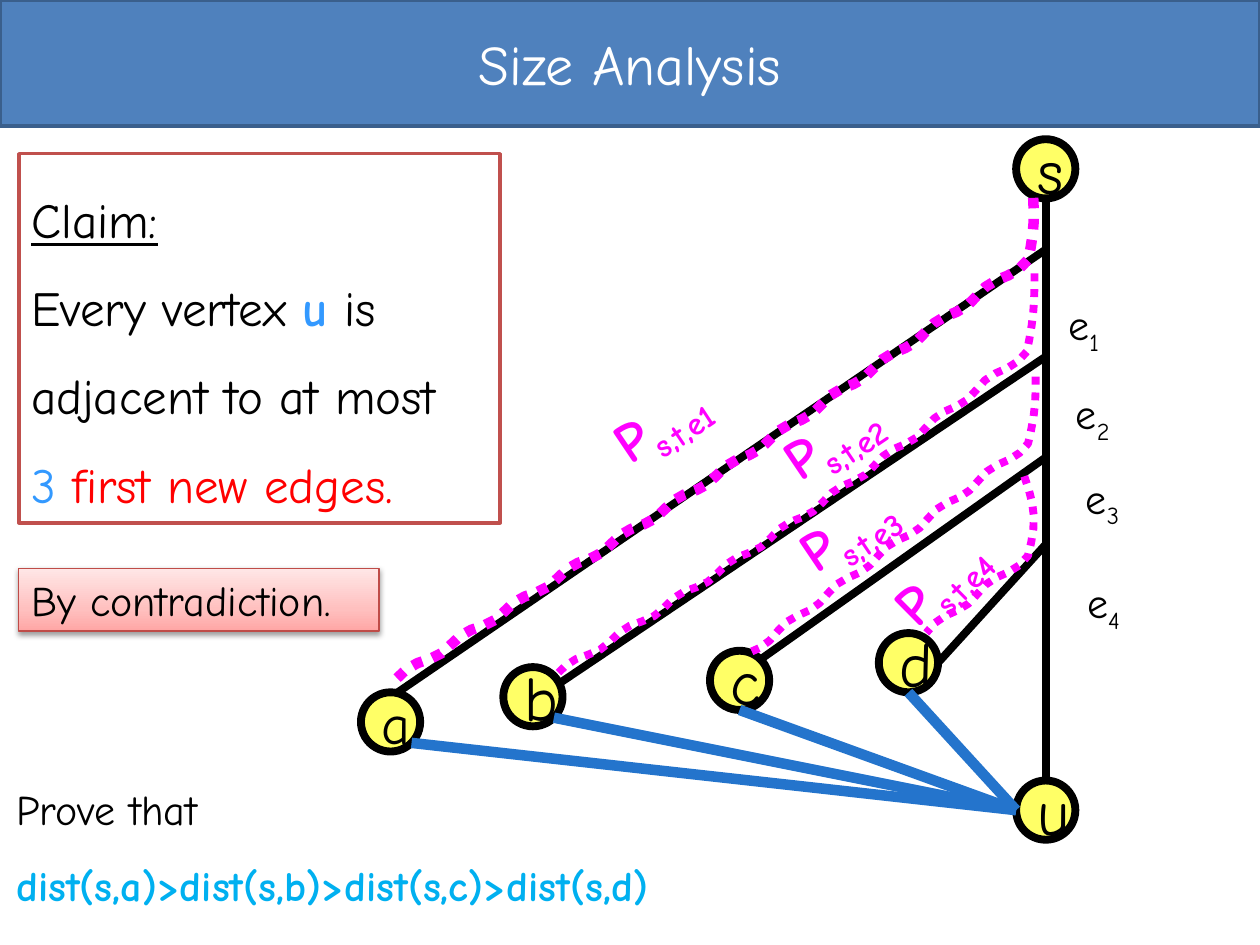
from math import cos, hypot, pi, radians, sin
from typing import NamedTuple

from lxml import etree
from pptx import Presentation
from pptx.dml.color import RGBColor
from pptx.enum.dml import MSO_LINE
from pptx.enum.shapes import MSO_CONNECTOR, MSO_SHAPE
from pptx.enum.text import MSO_ANCHOR, MSO_AUTO_SIZE, PP_ALIGN
from pptx.oxml import parse_xml
from pptx.oxml.ns import nsdecls, qn
from pptx.util import Inches, Pt

FONT = "Comic Neue"
BLACK, WHITE, YELLOW, MAGENTA = "000000", "FFFFFF", "FFFF66", "FF00FF"
TITLE_BLUE, EDGE_BLUE, WORD_BLUE, SKY, RED = "4F81BD", "2474CC", "3399FF", "00B0F0", "FF0000"
RADIUS = 0.235
SPINE_X = 8.3
SOURCE, TARGET = (SPINE_X, 1.34), (SPINE_X, 6.43)
RIGHT, BOTTOM_RIGHT, BOTTOM, LEFT, TOP = 0, 45, 90, 180, 270
STEP, RIPPLE, RIPPLE_LENGTH = 0.1, 0.02, 0.5


class Detour(NamedTuple):
    vertex: str
    centre: tuple
    size: int
    fork_y: float
    branch_angle: float
    edge_angle: float
    path_start: tuple
    path_corner: tuple
    path_end: tuple
    path_width: float
    bulge: float
    sag: float
    edge_label: tuple
    path_label: tuple
    tilt: float


DETOURS = [
    Detour("a", (3.1, 5.73), 32, 1.98, 282, BOTTOM_RIGHT, (8.2, 1.57), (8.16, 2.06),
           (3.15, 5.38), 6, 0.02, 0.06, (8.38, 2.32), (4.71, 2.91), 326),
    Detour("b", (4.23, 5.53), 36, 2.83, 333, BOTTOM_RIGHT, (8.21, 2.17), (8.15, 2.79),
           (4.41, 5.35), 4.5, 0.02, 0.07, (8.44, 3.03), (6.06, 3.05), 326),
    Detour("c", (5.87, 5.4), 36, 3.63, 315, BOTTOM, (8.22, 2.99), (8.16, 3.52),
           (5.94, 5.19), 4.5, 0.02, 0, (8.52, 3.7), (6.19, 3.78), 326),
    Detour("d", (7.21, 5.26), 36, 4.32, RIGHT, BOTTOM, (8.13, 3.78), (8.16, 4.41),
           (7.35, 5.02), 4.5, 0.06, 0, (8.53, 4.53), (6.9, 4.15), 315.2),
]


def rgb(value):
    return RGBColor.from_string(value)


def inches(*values):
    return [Inches(v) for v in values]


def rim(centre, angle):
    return centre[0] + RADIUS * cos(radians(angle)), centre[1] + RADIUS * sin(radians(angle))


def curve(start, end, bow, ripple=0):
    dx, dy = end[0] - start[0], end[1] - start[1]
    length = hypot(dx, dy)
    steps = round(length / STEP)
    points = []
    for i in range(steps + 1):
        t = i / steps
        offset = bow * sin(pi * t) + ripple * sin(2 * pi * t * length / RIPPLE_LENGTH)
        points.append((start[0] + t * dx + offset * dy / length,
                       start[1] + t * dy - offset * dx / length))
    return points


def write(tf, paragraphs, size, align=PP_ALIGN.LEFT, spacing=None, color=BLACK):
    for i, runs in enumerate(paragraphs):
        p = tf.add_paragraph() if i else tf.paragraphs[0]
        p.alignment = align
        if spacing:
            p.line_spacing = spacing
        for text, look in runs:
            look = {"name": FONT, "size": Pt(size), "color": color, **look}
            r = p.add_run()
            r.text = text
            r.font.color.rgb = rgb(look.pop("color"))
            if look.pop("sub", False):
                r.font._element.set("baseline", "-25000")
            for name, value in look.items():
                setattr(r.font, name, value)


def paint(sp, fill, line, width):
    sp.shadow.inherit = False
    sp.fill.solid()
    sp.fill.fore_color.rgb = rgb(fill)
    sp.line.color.rgb = rgb(line)
    sp.line.width = Pt(width)


def fit_text(sp, wrap):
    tf = sp.text_frame
    tf.word_wrap = wrap
    tf.auto_size = MSO_AUTO_SIZE.SHAPE_TO_FIT_TEXT
    tf.vertical_anchor = MSO_ANCHOR.TOP
    return tf


def add_title(s, text):
    sp = s.shapes.title
    sp.left, sp.top, sp.width, sp.height = inches(0, 0, 10, 1)
    paint(sp, TITLE_BLUE, "3A5F8C", 2)
    sp.text_frame.vertical_anchor = MSO_ANCHOR.MIDDLE
    write(sp.text_frame, [[(text, {})]], 32, PP_ALIGN.CENTER, color=WHITE)


def add_box(s, box, line, width, paragraphs, size, spacing=None):
    sp = s.shapes.add_shape(MSO_SHAPE.RECTANGLE, *inches(*box))
    paint(sp, WHITE, line, width)
    write(fit_text(sp, False), paragraphs, size, spacing=spacing)
    return sp


def add_text(s, box, paragraphs, size, wrap=False, rotation=0, **style):
    sp = s.shapes.add_textbox(*inches(*box))
    sp.rotation = rotation
    write(fit_text(sp, wrap), paragraphs, size, **style)


def shade(sp, stops):
    gs = "".join(f'<a:gs pos="{pos * 1000}"><a:srgbClr val="{color}"/></a:gs>' for pos, color in stops)
    gradient = (f'<a:gradFill {nsdecls("a")}><a:gsLst>{gs}</a:gsLst>'
                '<a:lin ang="16200000"/></a:gradFill>')
    shadow = (f'<a:effectLst {nsdecls("a")}><a:outerShdw blurRad="40000" dist="20000" '
              'dir="5400000" rotWithShape="0"><a:srgbClr val="000000"><a:alpha val="38000"/>'
              '</a:srgbClr></a:outerShdw></a:effectLst>')
    spPr = sp._element.spPr
    for tag, xml in (("a:solidFill", gradient), ("a:effectLst", shadow)):
        spPr.replace(spPr.find(qn(tag)), parse_xml(xml))


def add_node(s, name, centre, size=36):
    x, y = centre
    box = inches(x - RADIUS, y - RADIUS, 2 * RADIUS, 2 * RADIUS)
    sp = s.shapes.add_shape(MSO_SHAPE.OVAL, *box)
    paint(sp, YELLOW, BLACK, 4.5)
    sp.text_frame.vertical_anchor = MSO_ANCHOR.MIDDLE
    write(sp.text_frame, [[(name, {})]], size, PP_ALIGN.CENTER)


def add_line(s, start, end, color=BLACK, width=4.5):
    c = s.shapes.add_connector(MSO_CONNECTOR.STRAIGHT, *inches(*start, *end))
    c.line.color.rgb = rgb(color)
    c.line.width = Pt(width)
    etree.SubElement(c._element.spPr, qn("a:effectLst"))


def add_dotted_path(s, points, width):
    start, *rest = [inches(*point) for point in points]
    builder = s.shapes.build_freeform(*start)
    builder.add_line_segments(rest, close=False)
    sp = builder.convert_to_shape()
    sp.shadow.inherit = False
    sp.fill.background()
    sp.line.color.rgb = rgb(MAGENTA)
    sp.line.width = Pt(width)
    sp.line.dash_style = MSO_LINE.ROUND_DOT


def add_graph(s):
    add_node(s, "s", SOURCE)
    add_node(s, "u", TARGET)
    add_line(s, rim(TARGET, TOP), rim(SOURCE, BOTTOM))
    for d in DETOURS:
        add_line(s, (SPINE_X, d.fork_y), rim(d.centre, d.branch_angle))
    for d in DETOURS:
        add_node(s, d.vertex, d.centre, d.size)
        add_line(s, rim(d.centre, d.edge_angle), rim(TARGET, LEFT), EDGE_BLUE, 6)
    for i, d in enumerate(DETOURS, 1):
        descent = curve(d.path_start, d.path_corner, d.bulge)
        slant = curve(d.path_corner, d.path_end, d.sag, RIPPLE)
        add_dotted_path(s, descent + slant[1:], d.path_width)
        add_text(s, (*d.edge_label, 0.52, 0.5), [[("e", {}), (str(i), {"sub": True})]], 24)
        label = [("P", {"bold": True}), (f"s,t,e{i}", {"bold": True, "sub": True})]
        add_text(s, (*d.path_label, 1.33, 0.64), [label], 32, rotation=d.tilt, color=MAGENTA)


def main():
    prs = Presentation()
    prs.slide_width, prs.slide_height = inches(10, 7.5)
    s = prs.slides.add_slide(prs.slide_layouts[5])
    add_title(s, "Size Analysis")
    add_box(s, (0.15, 1.22, 3.82, 2.93), "C0504D", 2, [
        [("Claim:", {"underline": True})],
        [("Every vertex ", {}), ("u", {"color": WORD_BLUE, "bold": True}), (" is", {})],
        [("adjacent to at most", {})],
        [("3 ", {"color": WORD_BLUE}), ("first new edges.", {"color": RED})],
    ], 28, 1.5)
    add_graph(s)
    add_text(s, (0.03, 5.97, 7.02, 1.72), [
        [("Prove that", {})],
        [("dist(s,a)>dist(s,b)>dist(s,c)>dist(s,d)", {"color": SKY, "bold": True})],
    ], 24, wrap=True, spacing=1.5)
    method = add_box(s, (0.15, 4.51, 2.86, 0.5), "BF4C48", 0.75, [[("By contradiction.", {})]], 24)
    shade(method, [(0, "FFA6A5"), (35, "FFC0BF"), (100, "FFE7E7")])
    prs.save("out.pptx")


if __name__ == "__main__":
    main()
